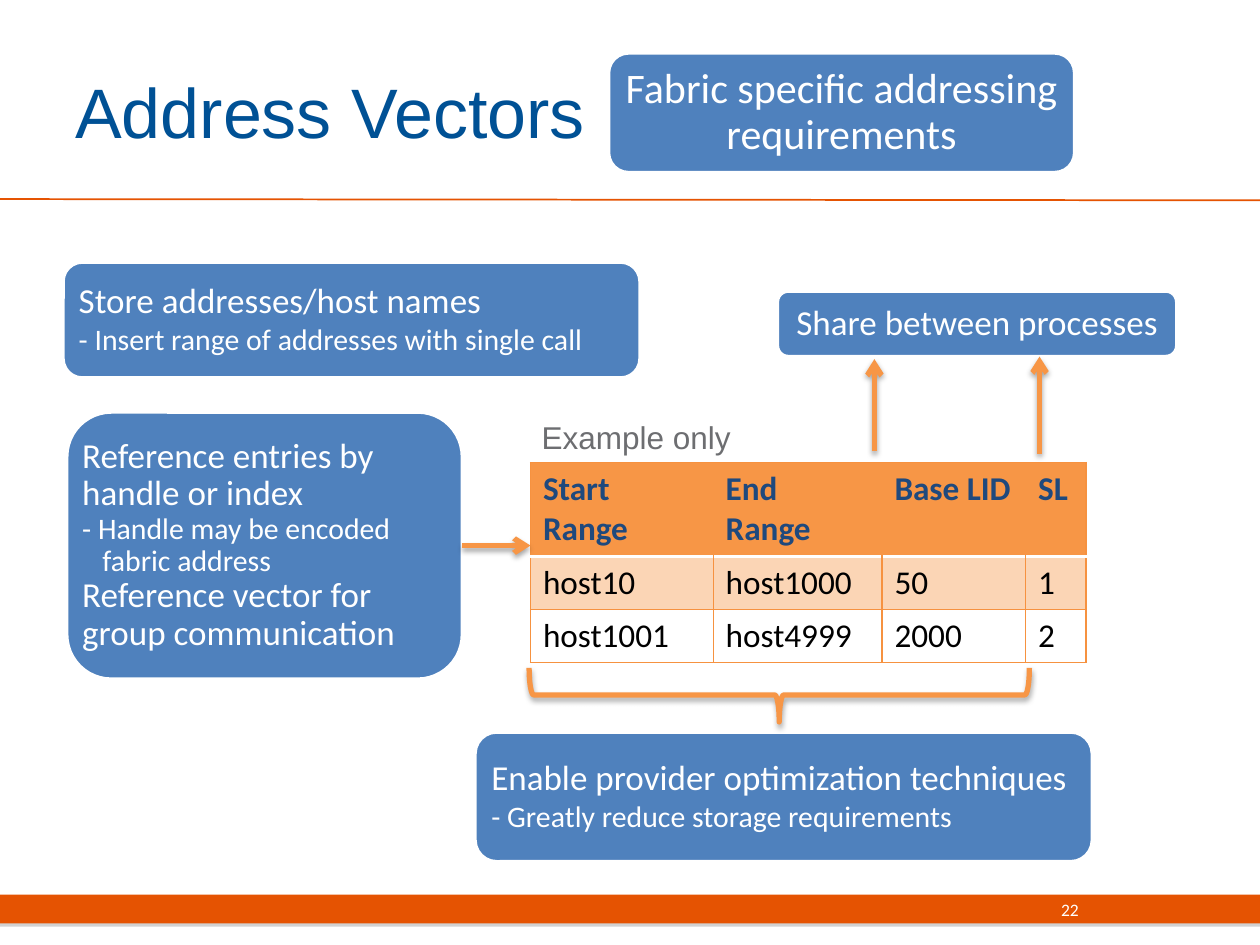
"""Build the Address Vectors slide with its callouts and range table."""
from dataclasses import dataclass

from lxml.etree import SubElement
from pptx import Presentation
from pptx.dml.color import RGBColor
from pptx.enum.shapes import MSO_CONNECTOR, MSO_SHAPE
from pptx.enum.text import MSO_ANCHOR, PP_ALIGN
from pptx.oxml.ns import qn
from pptx.util import Inches, Pt


@dataclass(frozen=True)
class Theme:
    head: str = "Arial"
    body: str = "Calibri"
    title: int = 40
    lead: int = 24
    main: int = 20
    cell: int = 19
    note: int = 18
    sub: int = 17
    page: int = 10
    white: str = "FFFFFF"
    black: str = "000000"
    gray: str = "808080"
    ink: str = "6D6E71"
    navy: str = "005195"
    dark: str = "1F497D"
    blue: str = "4F81BD"
    rust: str = "E55302"
    amber: str = "F79646"
    edge: str = "F69240"


def shade(item, color=None, blur=0):
    props = item._element.spPr
    for old in props.findall(qn("a:effectLst")):
        props.remove(old)
    effect = SubElement(props, qn("a:effectLst"))
    if color:
        cast = SubElement(effect, qn("a:outerShdw"), blurRad=str(Pt(blur)),
                          dist=str(Pt(1.8)), dir="5400000", rotWithShape="0")
        tint = SubElement(cast, qn("a:srgbClr"), val=color)
        SubElement(tint, qn("a:alpha"), val="35000")


def write(frame, lines, color, face=Theme.body, align=PP_ALIGN.LEFT, bold=False):
    frame.word_wrap = True
    for i, (text, size, space) in enumerate(lines):
        para = frame.add_paragraph() if i else frame.paragraphs[0]
        para.text = text
        para.alignment = align
        para.line_spacing = space
        if "\v" in text:
            props = para._p.get_or_add_pPr()
            props.set("marL", str(Inches(0.16)))
            props.set("indent", str(-Inches(0.16)))
        para.font.name = face
        para.font.size = Pt(size)
        para.font.bold = bold
        para.font.color.rgb = RGBColor.from_string(color)


theme = Theme()
deck = Presentation()
deck.slide_width, deck.slide_height = Inches(10), Inches(7.5)
slide = deck.slides.add_slide(deck.slide_layouts[6])
shapes = slide.shapes

bar = shapes.add_shape(MSO_SHAPE.RECTANGLE, 0, Inches(7.1), Inches(10), Inches(0.23))
bar.fill.solid()
bar.fill.fore_color.rgb = RGBColor.from_string(theme.rust)
bar.line.fill.background()
shade(bar, theme.gray)

rule = shapes.add_connector(MSO_CONNECTOR.STRAIGHT, 0, Inches(1.58), Inches(10), Inches(1.59))
rule.line.color.rgb = RGBColor.from_string(theme.rust)
rule.line.width = Pt(1)
shade(rule)

labels = [
    ((0.5, 0.25, 8.17, 1.25), "Address Vectors", theme.title, theme.navy, theme.head, PP_ALIGN.LEFT),
    ((6.33, 7.02, 2.33, 0.4), "22", theme.page, theme.white, theme.body, PP_ALIGN.RIGHT),
    ((4.2, 3.27, 1.89, 0.4), "Example only", theme.note, theme.ink, theme.head, PP_ALIGN.LEFT),
]
for area, text, size, color, face, align in labels:
    label = shapes.add_textbox(*map(Inches, area))
    label.text_frame.vertical_anchor = MSO_ANCHOR.MIDDLE
    write(label.text_frame, [(text, size, 1.0)], color, face, align)

rows = [
    ("Start Range", "End Range", "Base LID", "SL"),
    ("host10", "host1000", "50", "1"),
    ("host1001", "host4999", "2000", "2"),
]
wides = [1.45, 1.34, 1.14, 0.48]
grid = shapes.add_table(3, 4, Inches(4.21), Inches(3.67), Inches(sum(wides)), Inches(1.59)).table
grid.horz_banding = False
for col, wide in zip(grid.columns, wides):
    col.width = Inches(wide)
for r, (row, high) in enumerate(zip(rows, [0.75, 0.42, 0.42])):
    grid.rows[r].height = Inches(high)
    for c, text in enumerate(row):
        cell = grid.cell(r, c)
        write(cell.text_frame, [(text, theme.cell, 1.0)],
              theme.black if r else theme.dark, bold=r == 0)
        thin = (theme.edge, 0.75)
        thick = (theme.white, 2)
        sides = {
            "L": thin if r or c == 0 else None,
            "R": thin if r or c == 3 else None,
            "T": thick if r == 1 else thin,
            "B": thin if r else thick,
        }
        props = cell._tc.get_or_add_tcPr()
        for side, style in sides.items():
            edge = SubElement(props, qn(f"a:ln{side}"))
            if style:
                edge.set("w", str(Pt(style[1])))
                SubElement(SubElement(edge, qn("a:solidFill")), qn("a:srgbClr"), val=style[0])
            else:
                SubElement(edge, qn("a:noFill"))
        if r == 2:
            cell.fill.background()
            continue
        cell.fill.solid()
        cell.fill.fore_color.rgb = RGBColor.from_string(theme.amber)
        if r == 1:
            tint = props.find(qn("a:solidFill")).find(qn("a:srgbClr"))
            SubElement(tint, qn("a:alpha"), val="40000")

boxes = {
    "store": ((0.5, 2.08, 4.58, 0.92), 0.08, PP_ALIGN.LEFT, [
        ("Store addresses/host names", theme.main, 0.9),
        ("- Insert range of addresses with single call", theme.sub, 1.0)]),
    "share": ((6.17, 2.31, 3.17, 0.52), 0.08, PP_ALIGN.CENTER, [
        ("Share between processes", theme.main, 0.9)]),
    "tune": ((3.77, 5.81, 4.9, 1.03), 0.08, PP_ALIGN.LEFT, [
        ("Enable provider optimization techniques", theme.main, 0.9),
        ("- Greatly reduce storage requirements", theme.sub, 1.0)]),
    "refer": ((0.53, 3.27, 3.14, 2.12), 0.02, PP_ALIGN.LEFT, [
        ("Reference entries by handle or index", theme.main, 0.9),
        ("- Handle may be encoded\vfabric address", theme.sub, 0.9),
        ("Reference vector for group communication", theme.main, 0.9)]),
    "fabric": ((4.83, 0.42, 3.7, 0.95), 0.08, PP_ALIGN.CENTER, [
        ("Fabric specific addressing requirements", theme.lead, 0.9)]),
}
made = {}
for name, (area, inset, align, lines) in boxes.items():
    box = made[name] = shapes.add_shape(MSO_SHAPE.ROUNDED_RECTANGLE, *map(Inches, area))
    box.fill.solid()
    box.fill.fore_color.rgb = RGBColor.from_string(theme.blue)
    box.line.color.rgb = RGBColor.from_string(theme.white)
    box.line.width = Pt(2)
    box.shadow.inherit = False
    frame = box.text_frame
    frame.vertical_anchor = MSO_ANCHOR.MIDDLE
    frame.margin_left = frame.margin_right = Inches(inset)
    frame.margin_top = frame.margin_bottom = Inches(inset)
    write(frame, lines, theme.white, align=align)

brace = shapes.add_shape(MSO_SHAPE.LEFT_BRACE, Inches(5.97), Inches(3.53), Inches(0.43), Inches(3.97))
brace.rotation = 270
brace.fill.background()
marks = [brace]
for ends in [(6.94, 3.58, 6.94, 2.85), (8.25, 3.6, 8.25, 2.83), (3.67, 4.33, 4.21, 4.33)]:
    arrow = shapes.add_connector(MSO_CONNECTOR.STRAIGHT, *map(Inches, ends))
    SubElement(arrow.line._get_or_add_ln(), qn("a:tailEnd"), type="arrow")
    marks.append(arrow)
marks[-1].begin_connect(made["refer"], 3)
for mark in marks:
    mark.line.color.rgb = RGBColor.from_string(theme.amber)
    mark.line.width = Pt(3)
    shade(mark, theme.black, 3.1)

deck.save("out.pptx")
